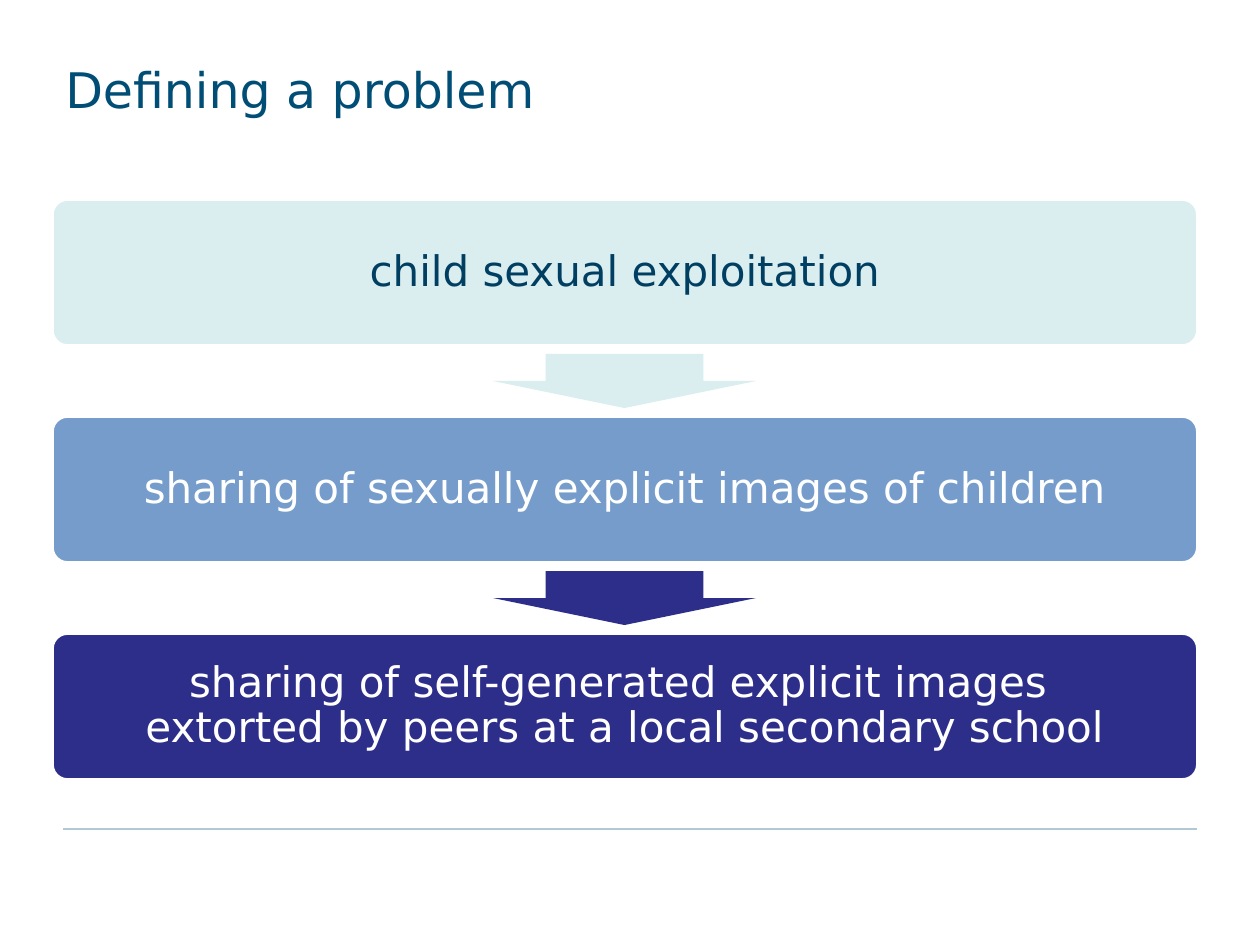
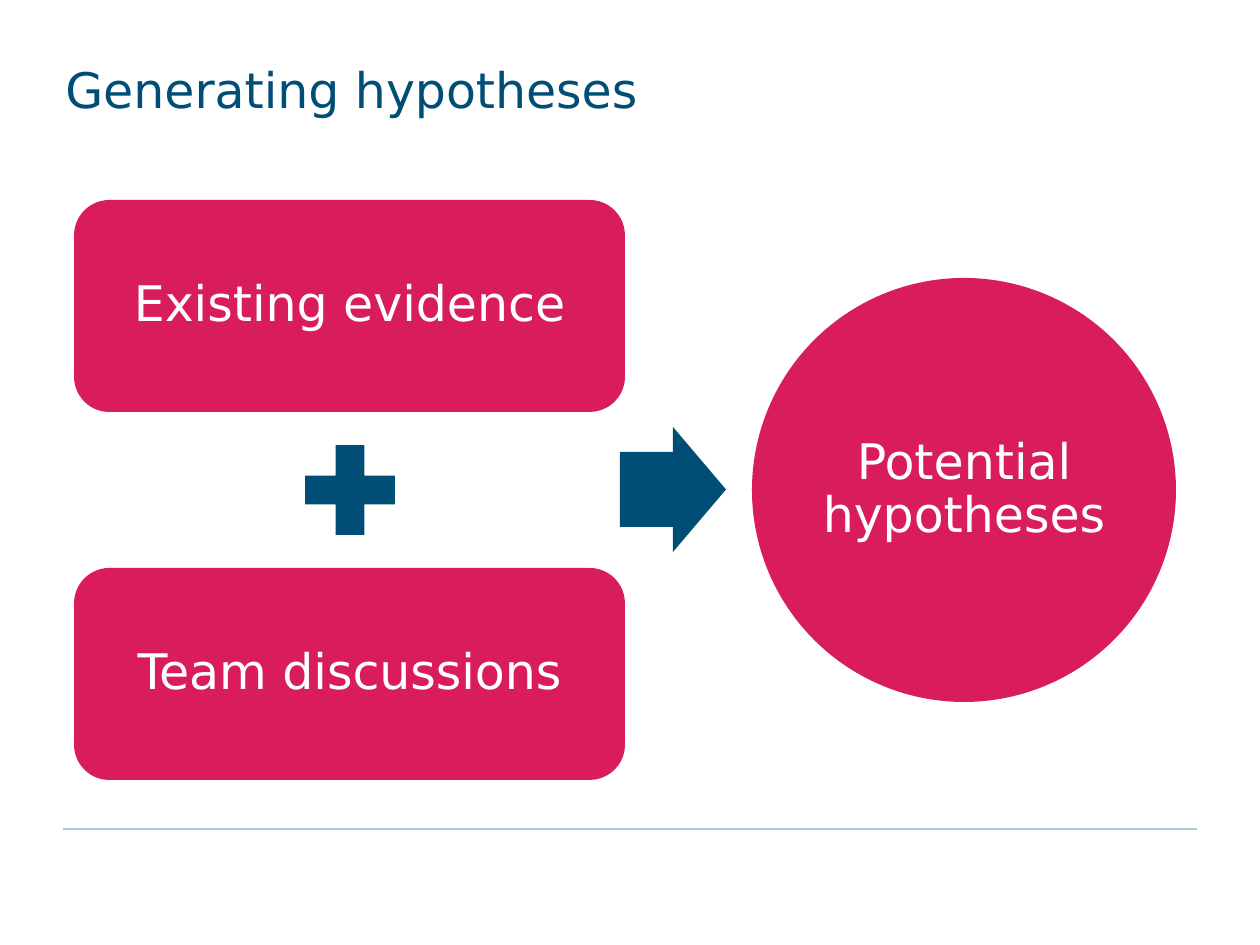
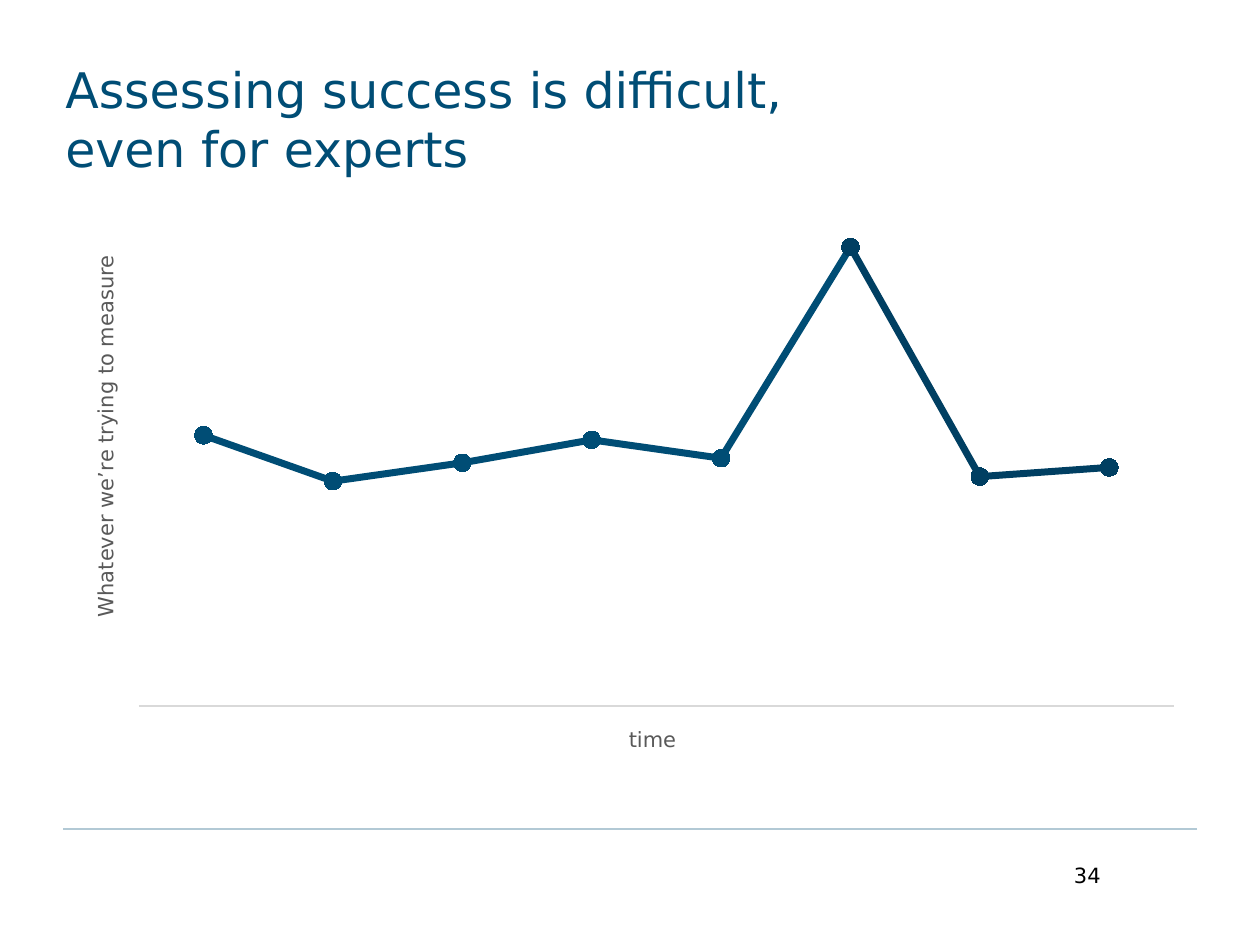
from lxml import etree
from pptx import Presentation
from pptx.chart.data import CategoryChartData
from pptx.dml.color import RGBColor
from pptx.enum.chart import XL_CHART_TYPE as ChartType, XL_MARKER_STYLE as Marker
from pptx.enum.chart import XL_TICK_LABEL_POSITION as LabelPosition, XL_TICK_MARK as TickMark
from pptx.enum.shapes import MSO_CONNECTOR as Connector, MSO_SHAPE as Shape
from pptx.enum.text import MSO_ANCHOR as Anchor, PP_ALIGN as Align
from pptx.oxml import parse_xml
from pptx.oxml.ns import nsdecls, qn
from pptx.util import Emu, Pt

FONT = "DejaVu Sans"
BLACK = RGBColor(0x00, 0x00, 0x00)
WHITE = RGBColor(0xFF, 0xFF, 0xFF)
TEAL = RGBColor(0x00, 0x4D, 0x75)
DARK_TEAL = RGBColor(0x00, 0x3F, 0x62)
PALE_TEAL = RGBColor(0xDA, 0xED, 0xEF)
SKY = RGBColor(0x75, 0x9C, 0xCB)
INDIGO = RGBColor(0x2D, 0x2D, 0x8A)
PINK = RGBColor(0xD9, 0x1D, 0x5B)
RULE_BLUE = RGBColor(0xB2, 0xC9, 0xD5)
GREY = RGBColor(0x59, 0x59, 0x59)
AXIS_GREY = RGBColor(0xD9, 0xD9, 0xD9)

PX_PER_INCH = 126
LEFT, CONTENT_TOP, CONTENT_WIDTH = 53, 200, 1144


def px(length):
    return Emu(round(length * 914400 / PX_PER_INCH))


def write(frame, text, size=28, color=WHITE, align=Align.CENTER, anchor=Anchor.MIDDLE,
          spacing=0.9, inset=None):
    frame.word_wrap = True
    frame.vertical_anchor = anchor
    if inset is not None:
        frame.margin_left = frame.margin_right = px(inset)
        frame.margin_top = frame.margin_bottom = px(inset)
    paragraph = frame.paragraphs[0]
    paragraph.text = text
    paragraph.alignment = align
    paragraph.line_spacing = spacing
    style_font(paragraph.font, size, color)


def style_font(font, size, color):
    font.name = FONT
    font.size = Pt(size)
    font.bold = False
    font.color.rgb = color


def add_label(slide, text, box, **style):
    frame = slide.shapes.add_textbox(*map(px, box)).text_frame
    write(frame, text, anchor=Anchor.TOP, spacing=1.0, **style)


def add_block(slide, kind, box, fill, text=None, outline=None, adjust=(), **style):
    block = slide.shapes.add_shape(kind, *map(px, box))
    block.shadow.inherit = False
    block.fill.solid()
    block.fill.fore_color.rgb = fill
    if outline is None:
        block.line.fill.background()
    else:
        block.line.color.rgb = outline
        block.line.width = Pt(1)
    for index, value in enumerate(adjust):
        block.adjustments[index] = value
    if text:
        write(block.text_frame, text, **style)


def add_titled_slide(deck, title):
    """Start a slide with the shared title and the rule above the footer."""
    slide = deck.slides.add_slide(deck.slide_layouts[6])
    rule = slide.shapes.add_connector(Connector.STRAIGHT, px(1197), px(829), px(63), px(829))
    rule.line.color.rgb = RULE_BLUE
    rule.line.width = Pt(1.25)
    etree.SubElement(rule._element.spPr, qn("a:effectLst"))
    add_label(slide, title, (LEFT, 53, CONTENT_WIDTH, 147), color=TEAL, align=Align.LEFT)
    return slide


def manual_layout(x, y, width=None, height=None):
    """Return a c:layout in fractions of the chart; with a size it sets the inner plot."""
    sized = width is not None
    target = '<c:layoutTarget val="inner"/>' if sized else ""
    size = f'<c:w val="{width}"/><c:h val="{height}"/>' if sized else ""
    return parse_xml(
        f'<c:layout {nsdecls("c")}><c:manualLayout>{target}'
        '<c:xMode val="edge"/><c:yMode val="edge"/>'
        f'<c:x val="{x}"/><c:y val="{y}"/>{size}</c:manualLayout></c:layout>')


def set_layout(element, layout):
    for old in element.findall(qn("c:layout")):
        element.remove(old)
    text = element.find(qn("c:tx"))
    if text is None:
        element.insert(0, layout)
    else:
        text.addnext(layout)


def title_axis(axis, text, x, y):
    frame = axis.axis_title.text_frame
    frame.text = text
    style_font(frame.paragraphs[0].runs[0].font, 12, GREY)
    set_layout(axis.axis_title._element, manual_layout(x, y))
    axis.major_tick_mark = axis.minor_tick_mark = TickMark.NONE
    axis.tick_label_position = LabelPosition.NONE
    axis.has_major_gridlines = False


def add_measure_chart(slide):
    lines = [
        ("Series 1", (59, 49, 53, 58, 54, None, None, None), TEAL),
        ("Series 2", (None, None, None, None, 54, 100, None, None), TEAL),
        ("Series 3", (None, None, None, None, None, 100, 50, 52), DARK_TEAL),
    ]
    data = CategoryChartData()
    data.categories = [str(number) for number in range(1, 9)]
    for name, values, _ in lines:
        data.add_series(name, values)
    box = map(px, (LEFT, 199, CONTENT_WIDTH, 581))
    chart = slide.shapes.add_chart(ChartType.LINE_MARKERS, *box, data).chart
    chart.has_legend = False
    chart.has_title = False
    style_font(chart.font, 10, BLACK)
    plot = chart.plots[0]
    plot.vary_by_categories = False
    for series, (_, _, color) in zip(plot.series, lines):
        series.smooth = False
        series.format.line.color.rgb = color
        series.format.line.width = Pt(4)
        marker = series.marker
        marker.style = Marker.CIRCLE
        marker.size = 10
        marker.format.fill.solid()
        marker.format.fill.fore_color.rgb = color
        marker.format.line.color.rgb = color

    time, measure = chart.category_axis, chart.value_axis
    title_axis(time, "time", 0.5, 0.9)
    time.format.line.color.rgb = AXIS_GREY
    time.format.line.width = Pt(0.75)
    title_axis(measure, "Whatever we’re trying to measure", 0.03, 0.09)
    measure.format.line.fill.background()
    measure.minimum_scale, measure.maximum_scale = 0, 100
    plot_area = chart._chartSpace.chart.plotArea
    set_layout(plot_area, manual_layout(0.075, 0.083, 0.905, 0.79))


def build_problem(deck):
    slide = add_titled_slide(deck, "Defining a problem")
    steps = [
        ("child sexual exploitation", PALE_TEAL, DARK_TEAL, PALE_TEAL),
        ("sharing of sexually explicit images of children", SKY, WHITE, INDIGO),
        ("sharing of self-generated explicit images \v"
         "extorted by peers at a local secondary school", INDIGO, WHITE, None),
    ]
    height, pitch = 145, 217
    arrow_width, arrow_height = 263, 54
    arrow_left = LEFT + (CONTENT_WIDTH - arrow_width) // 2
    arrow_offset = (height + pitch - arrow_height) // 2
    for index, (text, fill, color, arrow_fill) in enumerate(steps):
        top = CONTENT_TOP + index * pitch
        add_block(slide, Shape.ROUNDED_RECTANGLE, (LEFT, top, CONTENT_WIDTH, height), fill, text,
                  outline=WHITE, adjust=(0.1,), size=24, color=color, inset=13)
        if arrow_fill is not None:
            add_block(slide, Shape.DOWN_ARROW,
                      (arrow_left, top + arrow_offset, arrow_width, arrow_height),
                      arrow_fill, adjust=(0.6, 0.5))


def build_hypotheses(deck):
    slide = add_titled_slide(deck, "Generating hypotheses")
    for index, source in enumerate(("Existing evidence", "Team discussions")):
        add_block(slide, Shape.ROUNDED_RECTANGLE, (74, CONTENT_TOP + index * 368, 551, 212),
                  PINK, source, inset=5)
    add_block(slide, Shape.MATH_PLUS, (289, 429, 122, 122), TEAL)
    add_block(slide, Shape.RIGHT_ARROW, (620, 427, 106, 125), TEAL, adjust=(0.6, 0.5))
    add_block(slide, Shape.OVAL, (752, 278, 424, 424), PINK, "Potential hypotheses", inset=5)


def build_success(deck):
    slide = add_titled_slide(deck, "Assessing success is difficult, \veven for experts")
    add_measure_chart(slide)
    add_label(slide, "34", (819, 856, 294, 66), size=12, color=BLACK, align=Align.RIGHT)


def main():
    deck = Presentation()
    deck.slide_width, deck.slide_height = px(1260), px(945)
    build_problem(deck)
    build_hypotheses(deck)
    build_success(deck)
    deck.save("out.pptx")


if __name__ == "__main__":
    main()
